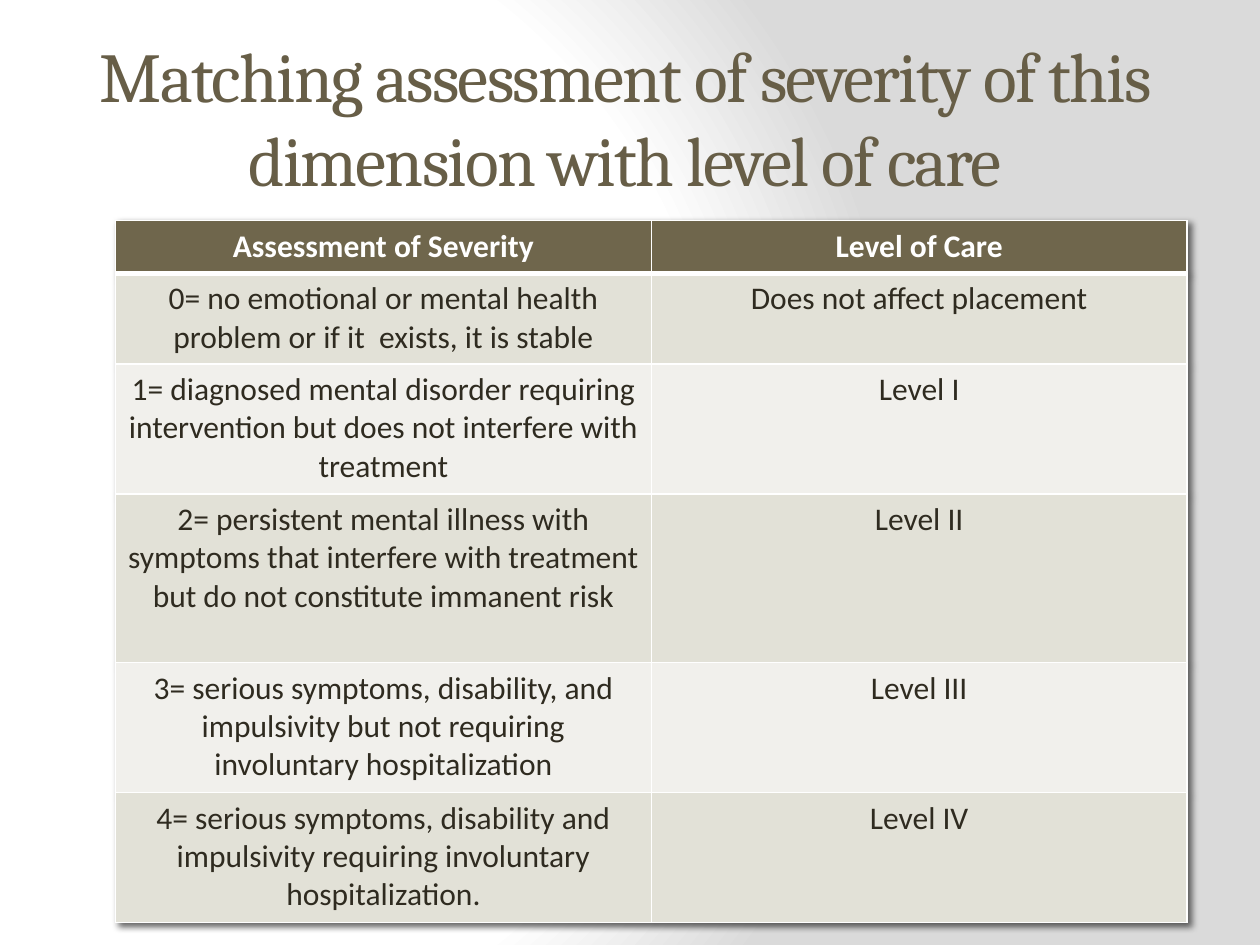
from typing import NamedTuple

from lxml import etree
from pptx import Presentation
from pptx.dml.color import RGBColor
from pptx.enum import text
from pptx.oxml import parse_xml
from pptx.oxml.ns import nsdecls, qn
from pptx.util import Cm, Pt

COLORS = {
    "title": "675E47",
    "header": "6F664C",
    "odd_row": "E2E1D7",
    "even_row": "F1F0EC",
    "ink": "2F2B20",
    "white": "FFFFFF",
    "backdrop": "DADADA",
    "shadow": "000000",
}
TITLE = "Matching assessment of severity of this dimension with level of care"
COLUMN_WIDTH = 10.8


class Row(NamedTuple):
    severity: str
    care: str
    height: float


ROWS = [
    Row("Assessment of Severity", "Level of Care", 1.06),
    Row("0= no emotional or mental health problem or if it  exists, it is stable",
        "Does not affect placement", 1.83),
    Row("1= diagnosed mental disorder requiring intervention but does not "
        "interfere with treatment", "Level I", 2.62),
    Row("2= persistent mental illness with symptoms that interfere with treatment "
        "but do not constitute immanent risk", "Level II", 3.4),
    Row("3= serious symptoms, disability, and impulsivity but not requiring "
        "involuntary hospitalization", "Level III", 2.62),
    Row("4= serious symptoms, disability and impulsivity requiring involuntary "
        "hospitalization.", "Level IV", 2.62),
]


def rgb(name: str) -> RGBColor:
    return RGBColor.from_string(COLORS[name])


def paint_background(slide) -> None:
    """Circular gradient, white at its centre on the left."""
    stops = "".join(
        f'<a:gs pos="{percent * 1000}"><a:srgbClr val="{COLORS[name]}"/></a:gs>'
        for percent, name in ((0, "white"), (75, "white"), (100, "backdrop"))
    )
    gradient = parse_xml(
        f'<a:gradFill {nsdecls("a")} rotWithShape="1"><a:gsLst>{stops}</a:gsLst>'
        '<a:path path="circle"><a:fillToRect l="20000" t="50000" r="100000" b="50000"/>'
        "</a:path></a:gradFill>"
    )
    slide.background.fill.solid()
    solid = next(slide.element.iter(qn("a:solidFill")))
    solid.getparent().replace(solid, gradient)


def write_title(slide) -> None:
    title = slide.shapes.title
    title.left, title.top, title.width, title.height = Cm(1.7), Cm(0.76), Cm(21.8), Cm(3.18)
    frame = title.text_frame
    frame.text = TITLE
    frame.auto_size = text.MSO_AUTO_SIZE.NONE
    frame.vertical_anchor = text.MSO_ANCHOR.MIDDLE
    line = frame.paragraphs[0]
    line.alignment = text.PP_ALIGN.CENTER
    line.font.name, line.font.size = "Cambria", Pt(40)
    line.font.color.rgb = rgb("title")
    line.runs[0].font._element.set("spc", "-100")


def add_borders(cell, bottom: float) -> None:
    """White lines, 1 pt wide except at the bottom; they go before the cell's fill."""
    widths = {"lnL": 1, "lnR": 1, "lnT": 1, "lnB": bottom}
    properties = cell._tc.get_or_add_tcPr()
    for position, (side, width) in enumerate(widths.items()):
        border = etree.Element(qn(f"a:{side}"), w=str(Pt(width)))
        fill = etree.SubElement(border, qn("a:solidFill"))
        etree.SubElement(fill, qn("a:srgbClr"), val=COLORS["white"])
        properties.insert(position, border)


def fill_cell(cell, wording: str, fill: str, is_header: bool) -> None:
    cell.text = wording
    cell.fill.solid()
    cell.fill.fore_color.rgb = rgb(fill)
    line = cell.text_frame.paragraphs[0]
    line.alignment = text.PP_ALIGN.CENTER
    line.font.name, line.font.size, line.font.bold = "Calibri", Pt(18), is_header
    line.font.color.rgb = rgb("white" if is_header else "ink")


def add_shadow(table) -> None:
    table._tbl.tblPr.insert(0, parse_xml(
        f'<a:effectLst {nsdecls("a")}>'
        '<a:outerShdw blurRad="50800" dist="38100" dir="2700000" algn="tl" rotWithShape="0">'
        f'<a:srgbClr val="{COLORS["shadow"]}"><a:alpha val="60000"/></a:srgbClr>'
        "</a:outerShdw></a:effectLst>"
    ))


def add_care_table(slide) -> None:
    height = sum(row.height for row in ROWS)
    table = slide.shapes.add_table(
        len(ROWS), 2, Cm(2.33), Cm(4.45), Cm(2 * COLUMN_WIDTH), Cm(height)
    ).table
    for column in table.columns:
        column.width = Cm(COLUMN_WIDTH)
    for index, row in enumerate(ROWS):
        table.rows[index].height = Cm(row.height)
        is_header = index == 0
        fill = "header" if is_header else "odd_row" if index % 2 else "even_row"
        for column, wording in enumerate((row.severity, row.care)):
            cell = table.cell(index, column)
            fill_cell(cell, wording, fill, is_header)
            add_borders(cell, bottom=3 if is_header else 1)
            if index == 1:
                cell._tc.tcPr.find(qn("a:lnT")).set("w", str(Pt(3)))
    add_shadow(table)


def main() -> None:
    deck = Presentation()
    deck.slide_width, deck.slide_height = Cm(25.4), Cm(19.05)
    slide = deck.slides.add_slide(deck.slide_layouts[5])
    paint_background(slide)
    write_title(slide)
    add_care_table(slide)
    deck.save("out.pptx")


if __name__ == "__main__":
    main()
